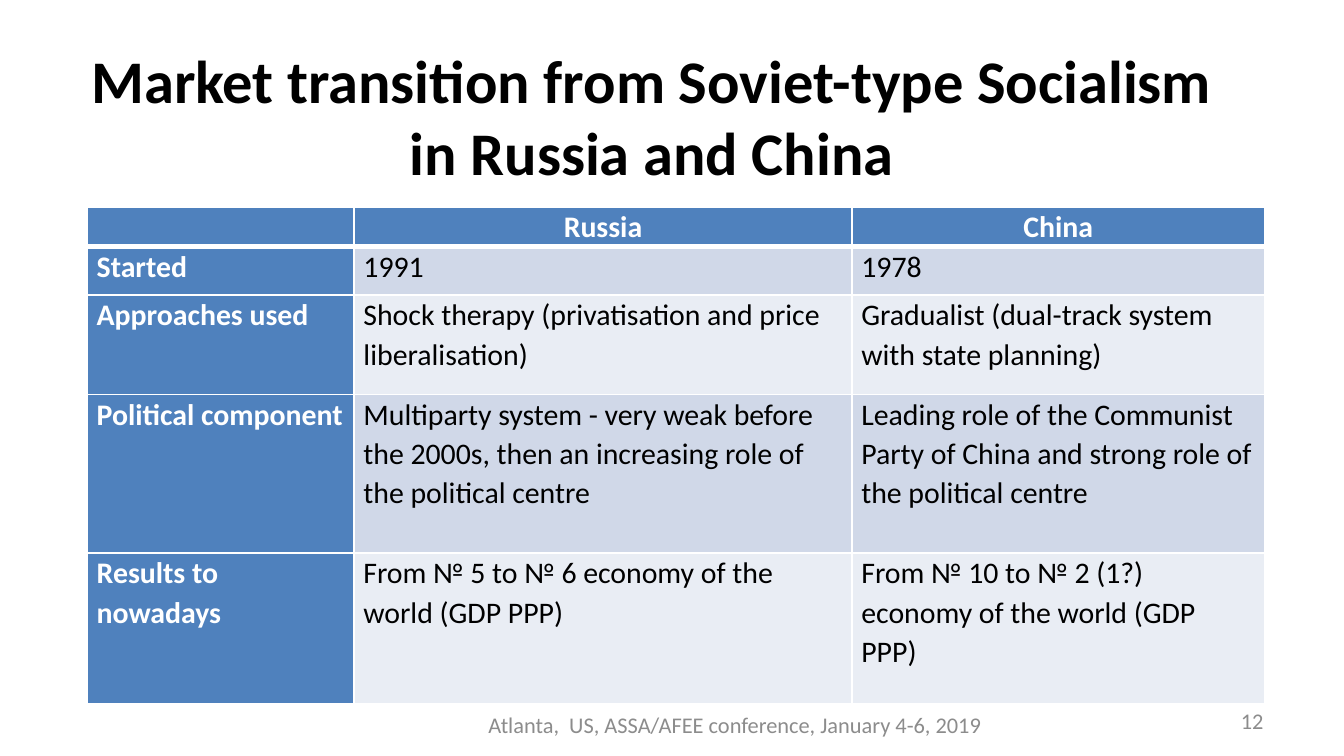
"""Build the slide that compares market transition in Russia and China."""
from lxml.etree import SubElement
from pptx import Presentation
from pptx.dml.color import RGBColor
from pptx.enum.text import MSO_ANCHOR, PP_ALIGN
from pptx.oxml.ns import qn
from pptx.util import Inches, Pt

WIDE = Inches(10)
BLUE, WHITE, BLACK, GREY = "4F81BD", "FFFFFF", "000000", "8C8C8C"
BANDS = ["E9EDF4", "D0D8E8"]


def share(part):
    """Turn a percentage of the slide's width into a length."""
    return round(WIDE * part / 100)


def style(para, size, color, bold, align):
    """Set the font and alignment of a paragraph."""
    para.alignment = align
    para.font.name = "Calibri"
    para.font.size = Pt(size)
    para.font.bold = bold
    para.font.color.rgb = RGBColor.from_string(color)


deck = Presentation()
deck.slide_width, deck.slide_height = WIDE, share(56.25)
slide = deck.slides.add_slide(deck.slide_layouts[6])

labels = [
    ("Market transition from Soviet-type Socialism\vin Russia and China",
     (3.5, 8.4, 90, 7), 32.4, BLACK, True, PP_ALIGN.CENTER, MSO_ANCHOR.BOTTOM, 1.4),
    ("Atlanta,  US, ASSA/AFEE conference, January 4-6, 2019",
     (34.2, 53.3, 41, 1.3), 12, GREY, False, PP_ALIGN.CENTER, MSO_ANCHOR.MIDDLE, 0),
    ("12", (71.7, 52.1, 23.3, 3), 12, GREY, False, PP_ALIGN.RIGHT, MSO_ANCHOR.MIDDLE, 0),
]
for text, place, size, color, bold, align, anchor, inset in labels:
    frame = slide.shapes.add_textbox(*map(share, place)).text_frame
    frame.word_wrap = True
    frame.vertical_anchor = anchor
    frame.margin_top = frame.margin_bottom = share(inset)
    para = frame.paragraphs[0]
    para.text = text
    style(para, size, color, bold, align)

rows = [
    ("", "Russia", "China"),
    ("Started", "1991", "1978"),
    ("Approaches used",
     "Shock therapy (privatisation and price liberalisation)",
     "Gradualist (dual-track system with state planning)"),
    ("Political component",
     "Multiparty system - very weak before the 2000s, "
     "then an increasing role of the political centre",
     "Leading role of the Communist Party of China "
     "and strong role of the political centre"),
    ("Results to nowadays",
     "From № 5 to № 6 economy of the world (GDP PPP)",
     "From № 10 to № 2 (1?) economy of the world (GDP PPP)"),
]
widths = [19.85, 37.05, 30.7]
heights = [2.95, 3.6, 7.4, 11.8, 11.25]
place = (6.5, 15.4, sum(widths), sum(heights))
table = slide.shapes.add_table(len(rows), len(widths), *map(share, place)).table
for column, width in zip(table.columns, widths):
    column.width = share(width)
for row, height in zip(table.rows, heights):
    row.height = share(height)

for r, row in enumerate(rows):
    for c, text in enumerate(row):
        cell = table.cell(r, c)
        head = r == 0 or c == 0
        cell.margin_left = cell.margin_right = share(0.7)
        cell.margin_top = cell.margin_bottom = 0
        props = cell._tc.get_or_add_tcPr()
        for side in ("lnL", "lnR", "lnT", "lnB"):
            thick = (r, side) in ((0, "lnB"), (1, "lnT"))
            line = SubElement(props, qn(f"a:{side}"), w=str(Pt(3 if thick else 1)))
            SubElement(SubElement(line, qn("a:solidFill")), qn("a:srgbClr"), val=WHITE)
        cell.fill.solid()
        cell.fill.fore_color.rgb = RGBColor.from_string(BLUE if head else BANDS[r % 2])
        para = cell.text_frame.paragraphs[0]
        para.line_spacing = 1.07
        style(para, 16, WHITE if head else BLACK, head,
              PP_ALIGN.LEFT if r else PP_ALIGN.CENTER)
        if text:
            para.text = text
        else:
            SubElement(para._p, qn("a:endParaRPr"), sz="1600")

deck.save("out.pptx")
